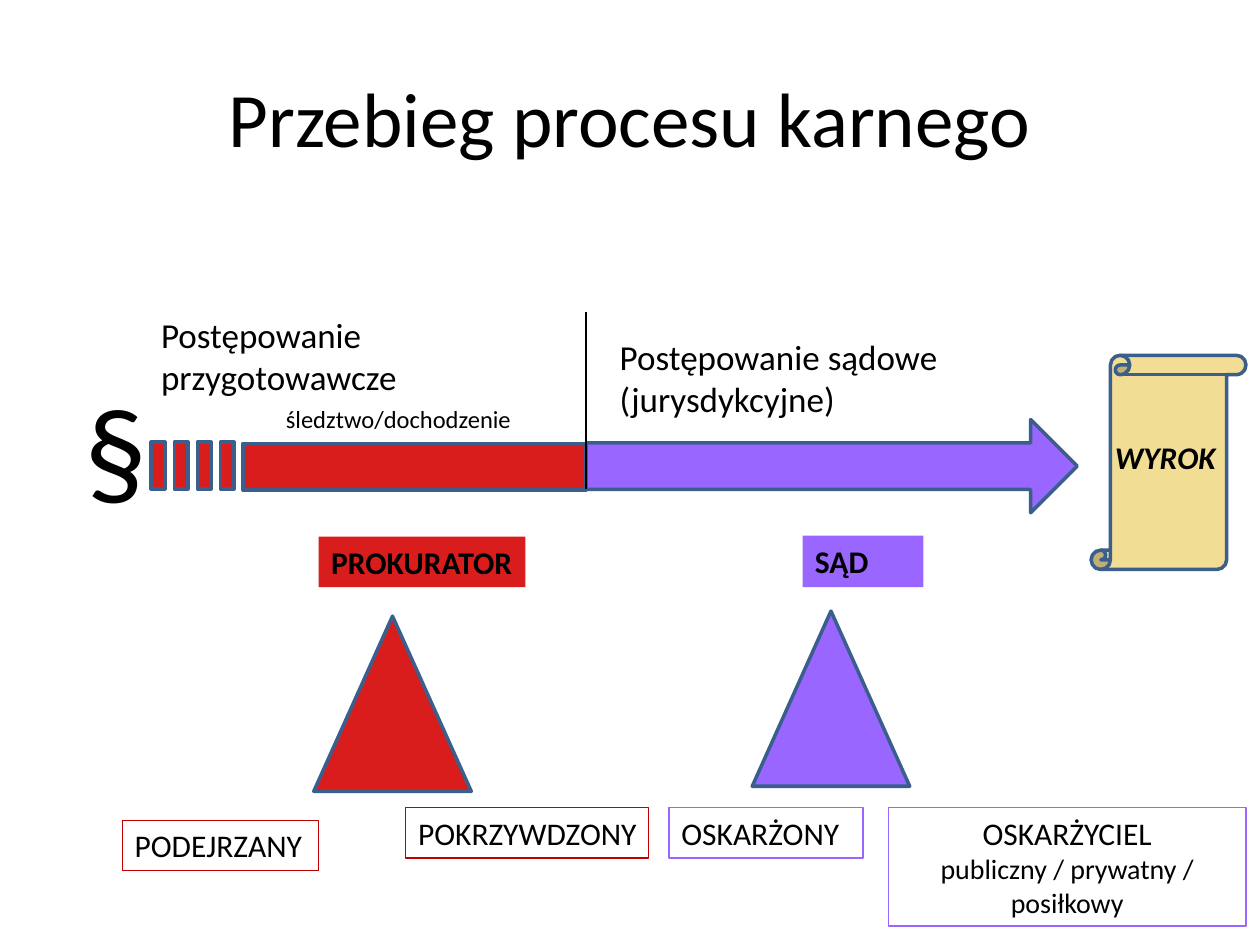
"""Build the slide on the course of criminal proceedings."""
from pptx import Presentation
from pptx.dml.color import RGBColor
from pptx.enum.shapes import MSO_CONNECTOR, MSO_SHAPE
from pptx.enum.text import MSO_ANCHOR, PP_ALIGN
from pptx.oxml.ns import qn
from pptx.util import Inches, Pt

RECT, TRIANGLE = MSO_SHAPE.RECTANGLE, MSO_SHAPE.ISOSCELES_TRIANGLE
ARROW, SCROLL = MSO_SHAPE.RIGHT_ARROW, MSO_SHAPE.VERTICAL_SCROLL
LEFT, CENTER = PP_ALIGN.LEFT, PP_ALIGN.CENTER
TOP, MIDDLE = MSO_ANCHOR.TOP, MSO_ANCHOR.MIDDLE
RED, PURPLE, PARCHMENT, WHITE = "D91D1D", "9966FF", "F1DD93", "FFFFFF"
OUTLINE, DARK_RED, BLACK = "3A5F8C", "C00000", "000000"

STAGE_BORDER = 4.65
STRIPES, STRIPE_START, STRIPE_STEP = 4, 1.2, 0.183
FIGURES = [
    (ARROW, (STAGE_BORDER, 3.33, 3.9, 0.74), PURPLE),
    (SCROLL, (8.66, 2.82, 1.23, 1.7), PARCHMENT),
    *[(RECT, (STRIPE_START + i * STRIPE_STEP, 3.51, 0.11, 0.37), RED)
      for i in range(STRIPES)],
    (RECT, (1.93, 3.52, STAGE_BORDER - 1.93, 0.37), RED),
    (TRIANGLE, (2.49, 4.89, 1.25, 1.39), RED),
    (TRIANGLE, (5.97, 4.85, 1.25, 1.39), PURPLE),
]
LABELS = [
    ("Przebieg procesu karnego", (0.5, 0.3, 9, 1.25),
     dict(size=44, align=CENTER, anchor=MIDDLE)),
    ("§", (0.57, 2.89, 0.53, 2.52), dict(size=72)),
    ("Postępowanie przygotowawcze", (1.18, 2.44, 2.8, 0.77), dict(size=20)),
    ("Postępowanie sądowe (jurysdykcyjne)", (4.82, 2.61, 3.66, 0.77), dict(size=20)),
    ("śledztwo/dochodzenie", (2.17, 3.16, 2.19, 0.34), dict(size=14)),
    ("WYROK", (8.75, 3.43, 1.03, 0.4), dict(bold=True, italic=True)),
]
PARTIES = [
    ("PROKURATOR", (2.53, 4.26, 1.64, 0.4), RED, None, dict(bold=True)),
    ("SĄD", (6.37, 4.25, 0.96, 0.41), PURPLE, None, dict(bold=True)),
    ("PODEJRZANY", (0.97, 6.51, 1.56, 0.4), WHITE, DARK_RED, {}),
    ("POKRZYWDZONY", (3.22, 6.41, 1.93, 0.4), WHITE, DARK_RED, {}),
    ("OSKARŻONY", (5.31, 6.41, 1.54, 0.4), WHITE, PURPLE, {}),
    ("OSKARŻYCIEL\npubliczny / prywatny / posiłkowy", (7.05, 6.41, 2.84, 0.94),
     WHITE, PURPLE, dict(align=CENTER, detail_size=16)),
]


def color(value):
    return RGBColor.from_string(value)


def add_figure(slide, preset, box, fill, line=OUTLINE, width=2):
    figure = slide.shapes.add_shape(preset, *map(Inches, box))
    figure.shadow.inherit = False
    figure.fill.solid()
    figure.fill.fore_color.rgb = color(fill)
    if line:
        figure.line.color.rgb = color(line)
        figure.line.width = Pt(width)
    else:
        figure.line.fill.background()
    return figure


def write(holder, text, size=18, detail_size=None, bold=False, italic=False,
          align=LEFT, anchor=TOP):
    frame = holder.text_frame
    frame.word_wrap = True
    frame.vertical_anchor = anchor
    if align == LEFT:
        frame.margin_right = Inches(0.05)
    frame.text = text
    for number, paragraph in enumerate(frame.paragraphs):
        paragraph.alignment = align
        font = paragraph.runs[0].font
        font.name, font.bold, font.italic = "Calibri", bold, italic
        font.size = Pt(detail_size if number and detail_size else size)
        font.color.rgb = color(BLACK)


def add_divider(slide, x, top, bottom):
    divider = slide.shapes.add_connector(
        MSO_CONNECTOR.STRAIGHT, *map(Inches, (x, top, x, bottom)))
    divider.line.color.rgb = color(BLACK)
    divider.line.width = Pt(1.5)
    properties = divider.element.spPr
    properties.append(properties.makeelement(qn("a:effectLst"), {}))


def main():
    deck = Presentation()
    deck.slide_width, deck.slide_height = Inches(10), Inches(7.5)
    slide = deck.slides.add_slide(deck.slide_layouts[6])
    for preset, box, fill in FIGURES:
        add_figure(slide, preset, box, fill)
    add_divider(slide, STAGE_BORDER, 2.48, 3.88)
    for text, box, style in LABELS:
        write(slide.shapes.add_textbox(*map(Inches, box)), text, **style)
    for text, box, fill, line, style in PARTIES:
        write(add_figure(slide, RECT, box, fill, line, 0.75), text, **style)
    deck.save("out.pptx")


if __name__ == "__main__":
    main()
